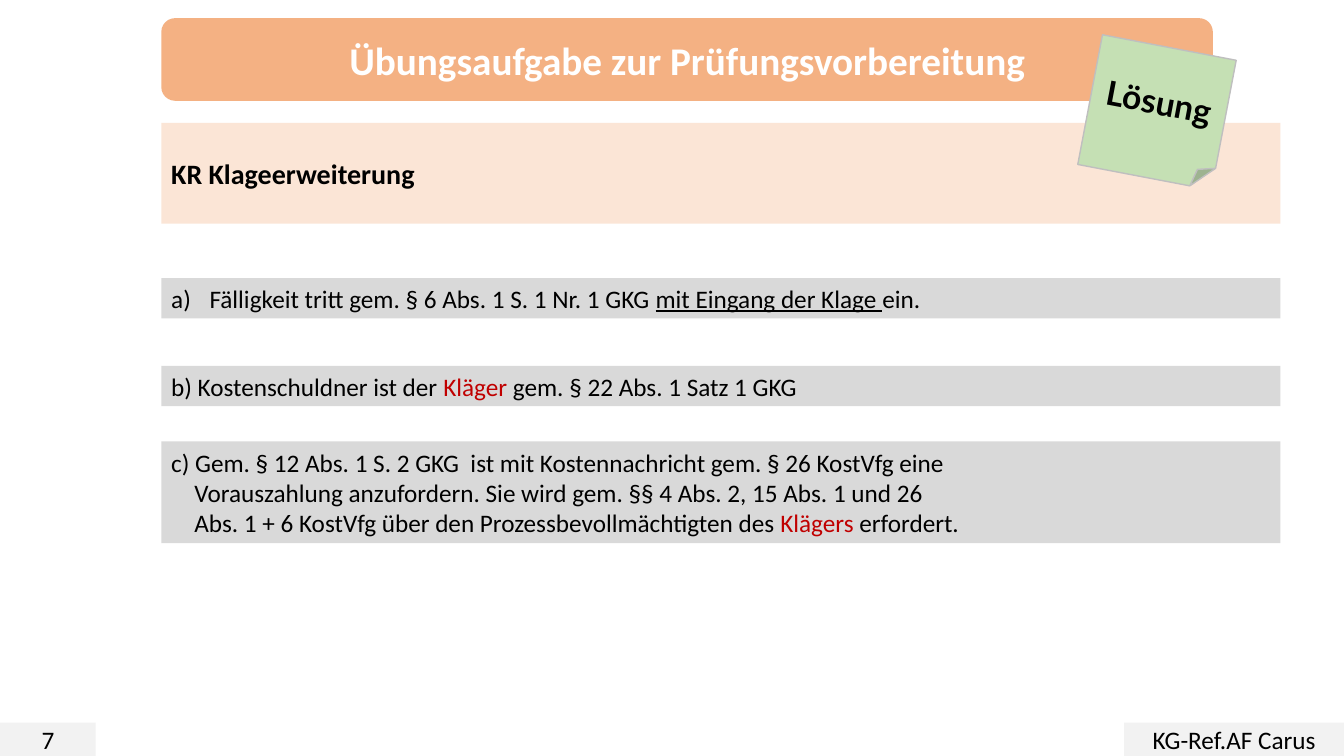
import pptx
import pptx.util
import pptx.dml.color
import pptx.enum.shapes
import pptx.enum.text
import lxml.etree

Inches = pptx.util.Inches
RGBColor = pptx.dml.color.RGBColor
MSO_SHAPE = pptx.enum.shapes.MSO_SHAPE
PP_ALIGN = pptx.enum.text.PP_ALIGN

BLACK = RGBColor(0x00, 0x00, 0x00)
WHITE = RGBColor(0xFF, 0xFF, 0xFF)
RED = RGBColor(0xC0, 0x00, 0x00)
ORANGE = RGBColor(0xF4, 0xB1, 0x83)
PALE_ORANGE = RGBColor(0xFB, 0xE5, 0xD6)
GREEN = RGBColor(0xC5, 0xE0, 0xB4)
NOTE_EDGE = RGBColor(0xBF, 0xBF, 0xBF)
ANSWER_GREY = RGBColor(0xD9, 0xD9, 0xD9)
FOOTER_GREY = RGBColor(0xF2, 0xF2, 0xF2)

presentation = pptx.Presentation()
presentation.slide_width = Inches(13.33)
presentation.slide_height = Inches(7.5)
slide = presentation.slides.add_slide(presentation.slide_layouts[6])


def add_box(lines, position, fill, kind=MSO_SHAPE.RECTANGLE, size=18, bold=False,
            font="Calibri", color=BLACK, align=PP_ALIGN.CENTER, hanging=0, numbered=False):
    shape = slide.shapes.add_shape(kind, *[Inches(length) for length in position])
    shape.shadow.inherit = False
    shape.fill.solid()
    shape.fill.fore_color.rgb = fill
    shape.line.fill.background()
    frame = shape.text_frame
    frame.word_wrap = True
    frame.vertical_anchor = pptx.enum.text.MSO_ANCHOR.MIDDLE
    for index, runs in enumerate(lines):
        paragraph = frame.add_paragraph() if index else frame.paragraphs[0]
        paragraph.alignment = align
        if hanging:
            properties = paragraph._p.get_or_add_pPr()
            properties.set("marL", str(Inches(hanging)))
            properties.set("indent", str(0 if index else -Inches(hanging)))
            if numbered:
                bullet = lxml.etree.SubElement(properties, pptx.oxml.ns.qn("a:buAutoNum"))
                bullet.set("type", "alphaLcParenR")
        for text, *style in runs:
            run = paragraph.add_run()
            run.text = text
            run.font.name = font
            run.font.size = pptx.util.Pt(size)
            run.font.bold = bold
            run.font.underline = "underline" in style
            run.font.color.rgb = RED if "red" in style else color
    return shape


add_box([[("Übungsaufgabe zur Prüfungsvorbereitung",)]], (1.6, 0.18, 10.43, 0.82), ORANGE,
        kind=MSO_SHAPE.ROUNDED_RECTANGLE, size=28, bold=True, color=WHITE)
add_box([[("KR Klageerweiterung",)]], (1.6, 1.22, 11.1, 1), PALE_ORANGE,
        size=20, bold=True, align=PP_ALIGN.LEFT)

solution_note = add_box([[("Lösung",)]], (10.8, 0.46, 1.35, 1.31), GREEN,
                        kind=MSO_SHAPE.FOLDED_CORNER, size=24, bold=True, font="Lato")
solution_note.rotation = 10.8
solution_note.line.color.rgb = NOTE_EDGE
solution_note.line.width = pptx.util.Pt(1)

answers = [
    (2.76, 0.4, 0.38, True, [
        [("Fälligkeit tritt gem. § 6 Abs. 1 S. 1 Nr. 1 GKG ",),
         ("mit Eingang der Klage ", "underline"), ("ein.",)],
    ]),
    (3.63, 0.4, 0, False, [
        [("b) Kostenschuldner ist der ",), ("Kläger", "red"),
         (" gem. § 22 Abs. 1 Satz 1 GKG",)],
    ]),
    (4.38, 1.01, 0.23, False, [
        [("c) Gem. § 12 Abs. 1 S. 2 GKG  ist mit Kostennachricht gem. § 26 KostVfg eine",)],
        [("Vorauszahlung anzufordern. Sie wird gem. §§ 4 Abs. 2, 15 Abs. 1 und 26",)],
        [("Abs. 1 + 6 KostVfg über den Prozessbevollmächtigten des ",),
         ("Klägers", "red"), (" erfordert.",)],
    ]),
]
for top, height, hanging, numbered, lines in answers:
    add_box(lines, (1.6, top, 11.1, height), ANSWER_GREY,
            align=PP_ALIGN.LEFT, hanging=hanging, numbered=numbered)

for text, left, width in [("7", 0, 0.95), ("KG-Ref.AF Carus", 11.15, 2.18)]:
    add_box([[(text,)]], (left, 7.17, width, 0.33), FOOTER_GREY)

presentation.save("out.pptx")
